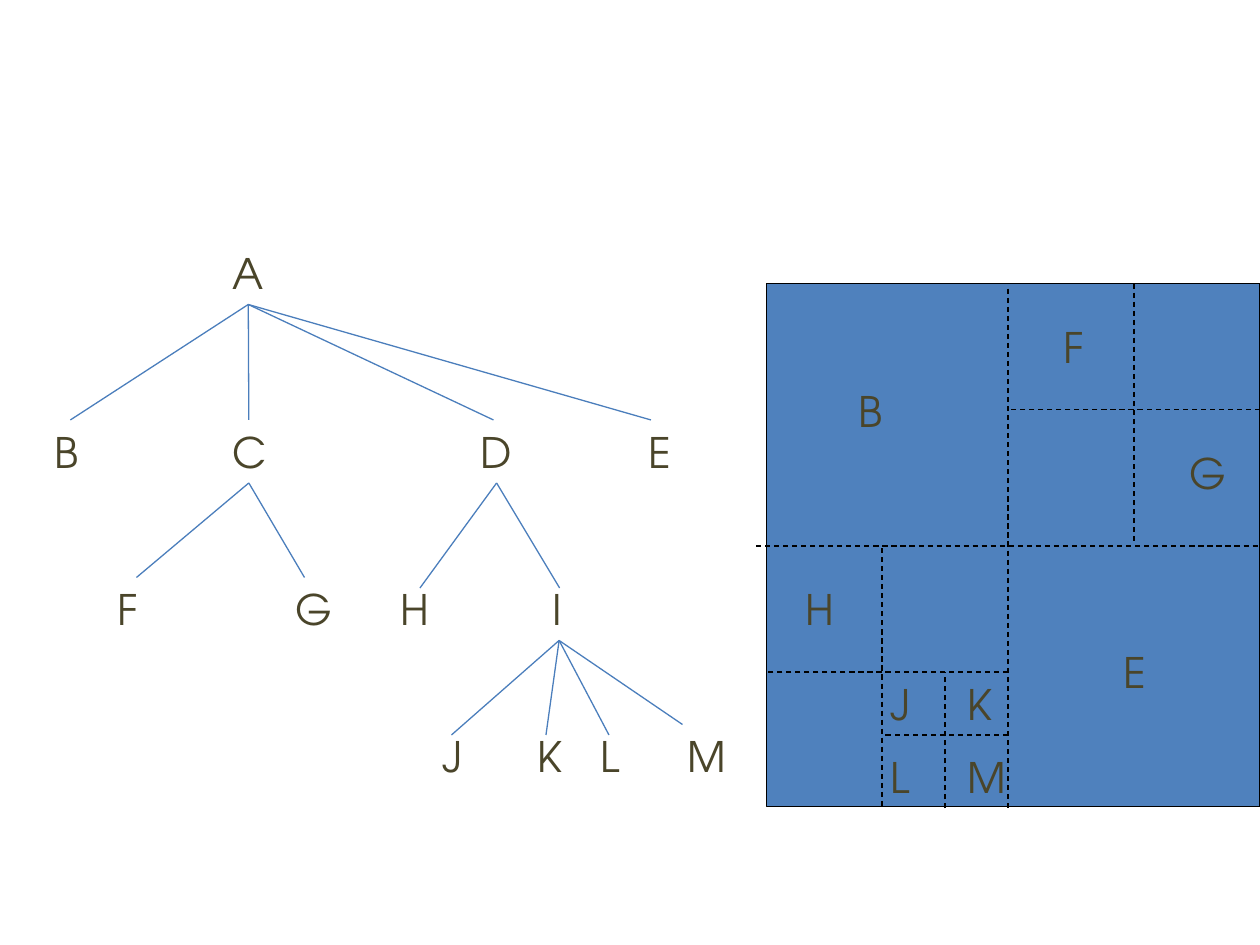
from lxml import etree
from pptx import Presentation
from pptx import util as u
from pptx.dml.color import RGBColor
from pptx.enum import dml, shapes, text
from pptx.oxml.ns import qn

COLS, ROWS = 120, 90
INK, BRANCH, SPLIT, AREA = "4A452A", "4B7EBC", "000000", "4F81BD"
LETTER_WIDTHS = dict(A=5.3, B=5.3, C=5.4, D=5.4, E=5.2, F=4.9, G=5.6,
                     H=5.5, I=3.7, J=4.7, K=5.4, L=4.9, M=5.8)
LETTER_HEIGHT = 6

deck = Presentation()
deck.slide_width, deck.slide_height = u.Inches(10), u.Inches(7.5)
slide = deck.slides.add_slide(deck.slide_layouts[6])
cell = deck.slide_width / COLS


def add_letter(letter, col, row):
    spots = (col, row, LETTER_WIDTHS[letter], LETTER_HEIGHT)
    box = slide.shapes.add_textbox(*(round(n * cell) for n in spots))
    frame_format = dict(word_wrap=False, auto_size=text.MSO_AUTO_SIZE.SHAPE_TO_FIT_TEXT)
    for name, value in frame_format.items():
        setattr(box.text_frame, name, value)
    run = box.text_frame.paragraphs[0].add_run()
    run.text = letter
    for name, value in dict(size=u.Pt(24), name="TeX Gyre Adventor").items():
        setattr(run.font, name, value)
    run.font.color.rgb = RGBColor.from_string(INK)
    return box


def add_line(start, end, color, dash=None):
    line = slide.shapes.add_connector(
        shapes.MSO_CONNECTOR.STRAIGHT, *(round(n * cell) for n in (*start, *end)))
    line.line.color.rgb = RGBColor.from_string(color)
    for name, value in dict(width=u.Pt(0.75), dash_style=dash).items():
        setattr(line.line, name, value)
    etree.SubElement(line._element.spPr, qn("a:effectLst"))
    return line


# Partitioned square
square = slide.shapes.add_shape(
    shapes.MSO_SHAPE.RECTANGLE, *(round(n * cell) for n in (73, 27, 47, 49.8)))
square.shadow.inherit = False
square.fill.solid()
square.fill.fore_color.rgb = RGBColor.from_string(AREA)
square.line.color.rgb = RGBColor.from_string(SPLIT)
square.line.width = u.Pt(0.75)

splits = [
    ((72, 52), (120, 52)), ((96, 27.5), (96, 77)),
    ((108, 27), (108, 51.7)), ((120, 39), (96, 39)),
    ((96, 64), (73, 64)), ((84, 52.2), (84, 77)),
    ((90, 77), (90, 64)), ((96, 70), (84, 70)),
]
for start, end in splits:
    add_line(start, end, SPLIT, dml.MSO_LINE.DASH)

regions = dict(B=(80.6, 36.1), E=(105.8, 61), F=(100.1, 30), G=(112.1, 42),
               H=(75.5, 55), J=(83.6, 64), K=(91, 64), L=(83.6, 71), M=(91, 71))
for letter, (col, row) in regions.items():
    add_letter(letter, col, row)

# Tree: node columns on each level row
levels = {
    23: dict(A=21),
    40: dict(B=4, C=21, D=44.6, E=60.6),
    55: dict(F=10, G=27, H=37, I=51.4),
    69: dict(J=41, K=50, L=56, M=64.3),
}
nodes = {letter: add_letter(letter, col, row)
         for row, level in levels.items() for letter, col in level.items()}

branches = {
    "A": dict(B=(6.7, 40), C=(23.7, 40), D=(47, 40), E=(62, 40)),
    "C": dict(F=(13, 55), G=(29, 55)),
    "D": dict(H=(40, 56), I=(53.3, 56)),
    "I": dict(J=(43, 70), K=(52, 70), L=(58, 70), M=(65, 69)),
}
for parent, children in branches.items():
    for child, tip in children.items():
        branch = add_line(tip, tip, BRANCH)
        branch.begin_connect(nodes[parent], 2)
        if child == "C":
            branch.end_connect(nodes[child], 0)

deck.save("out.pptx")
